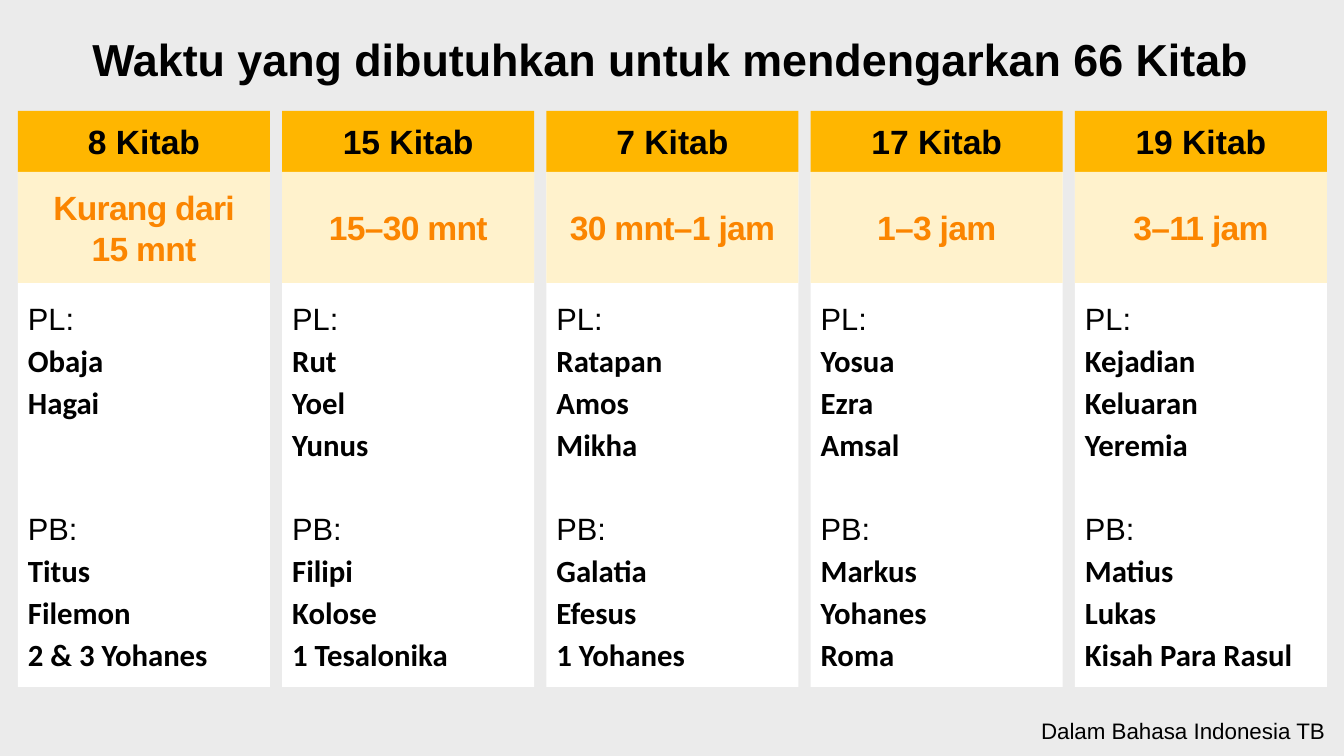
from dataclasses import dataclass

from pptx import Presentation
from pptx.dml.color import RGBColor
from pptx.enum.shapes import MSO_SHAPE
from pptx.enum.text import MSO_ANCHOR, PP_ALIGN
from pptx.util import Emu, Pt

# Content
TITLE = "Waktu yang dibutuhkan untuk mendengarkan 66 Kitab"
FOOTER = "Dalam Bahasa Indonesia TB"
COLUMNS = [  # count, duration lines, Old Testament, New Testament
    ("8 Kitab", ["Kurang dari", "15 mnt"],
     ["Obaja", "Hagai"], ["Titus", "Filemon", "2 & 3 Yohanes"]),
    ("15 Kitab", ["15–30 mnt"],
     ["Rut", "Yoel", "Yunus"], ["Filipi", "Kolose", "1 Tesalonika"]),
    ("7 Kitab", ["30 mnt–1 jam"],
     ["Ratapan", "Amos", "Mikha"], ["Galatia", "Efesus", "1 Yohanes"]),
    ("17 Kitab", ["1–3 jam"],
     ["Yosua", "Ezra", "Amsal"], ["Markus", "Yohanes", "Roma"]),
    ("19 Kitab", ["3–11 jam"],
     ["Kejadian", "Keluaran", "Yeremia"], ["Matius", "Lukas", "Kisah Para Rasul"]),
]


@dataclass(frozen=True)
class Theme:
    page: str = "EBEBEB"
    card: str = "FFFFFF"
    header: str = "FFB600"
    band: str = "FFF2CC"
    ink: str = "000000"
    accent: str = "FB8500"
    font: str = "Arial"
    book_font: str = "Calibri"
    title_size: int = 32
    head_size: int = 24
    list_size: int = 22
    foot_size: int = 16
    list_line: int = 30
    foot_line: int = 36


T = Theme()

# Layout in px
WIDTH, HEIGHT = 1344, 756
LEFT, RIGHT, COL_W = 18, 1327, 252
HEAD_Y, HEAD_H = 111, 61
BAND_Y, BAND_H = HEAD_Y + HEAD_H, 111
CARD_H = 515
LIST_Y, LIST_H, LIST_INDENT = 295, 379, 10
PITCH = (RIGHT - LEFT - COL_W) / (len(COLUMNS) - 1)


def px(n):
    return Emu(round(n * 914400 / 100.8))


def write(tf, text, *, size, color=T.ink, font=T.font, bold=False,
          align=PP_ALIGN.LEFT, line=None, before=0, spacing=0):
    """Add one paragraph, filling the first one while it is empty."""
    p = tf.paragraphs[0] if not tf.text else tf.add_paragraph()
    p.alignment = align
    if line:
        p.line_spacing = Pt(line)
    if before:
        p.space_before = Pt(before)
    r = p.add_run()
    r.text = text
    r.font.size, r.font.name, r.font.bold = Pt(size), font, bold
    r.font.color.rgb = RGBColor.from_string(color)
    if spacing:
        r.font._element.set("spc", str(spacing))


def add_box(s, x, y, w, h, fill):
    sp = s.shapes.add_shape(MSO_SHAPE.RECTANGLE, px(x), px(y), px(w), px(h))
    sp.shadow.inherit = False
    sp.fill.solid()
    sp.fill.fore_color.rgb = RGBColor.from_string(fill)
    sp.line.fill.background()
    sp.text_frame.vertical_anchor = MSO_ANCHOR.MIDDLE
    return sp.text_frame


def add_text(s, x, y, w, h, indent=0):
    tf = s.shapes.add_textbox(px(x), px(y), px(w), px(h)).text_frame
    tf.word_wrap = True
    tf.margin_left = px(indent)
    tf.margin_top = tf.margin_right = tf.margin_bottom = 0
    return tf


def add_column(s, x, count, duration, old, new, rows):
    add_box(s, x, BAND_Y, COL_W, CARD_H, T.card)
    write(add_box(s, x, HEAD_Y, COL_W, HEAD_H, T.header), count,
          size=T.head_size, bold=True, align=PP_ALIGN.CENTER)
    tf = add_box(s, x, BAND_Y, COL_W, BAND_H, T.band)
    for text in duration:
        write(tf, text, size=T.head_size, color=T.accent, bold=True,
              align=PP_ALIGN.CENTER, spacing=-50)

    # Book lists: the second group starts on the same line in every column
    tf = add_text(s, x, LIST_Y, COL_W, LIST_H, LIST_INDENT)
    gap = (rows - len(old) + 1) * T.list_line
    for label, books, before in (("PL:", old, 0), ("PB:", new, gap)):
        write(tf, label, size=T.list_size, line=T.list_line, before=before)
        for book in books:
            write(tf, book, size=T.list_size, font=T.book_font, bold=True,
                  line=T.list_line)


def main():
    prs = Presentation()
    prs.slide_width, prs.slide_height = px(WIDTH), px(HEIGHT)
    s = prs.slides.add_slide(prs.slide_layouts[6])
    s.background.fill.solid()
    s.background.fill.fore_color.rgb = RGBColor.from_string(T.page)

    # Title
    write(add_text(s, 25, 32, 1292, 54), TITLE, size=T.title_size, bold=True,
          align=PP_ALIGN.CENTER)

    # Columns
    rows = max(len(old) for _, _, old, _ in COLUMNS)
    for i, column in enumerate(COLUMNS):
        add_column(s, LEFT + i * PITCH, *column, rows)

    # Footer
    write(add_text(s, 1024, 694, 301, 43), FOOTER, size=T.foot_size,
          align=PP_ALIGN.RIGHT, line=T.foot_line)

    prs.save("out.pptx")


if __name__ == "__main__":
    main()
